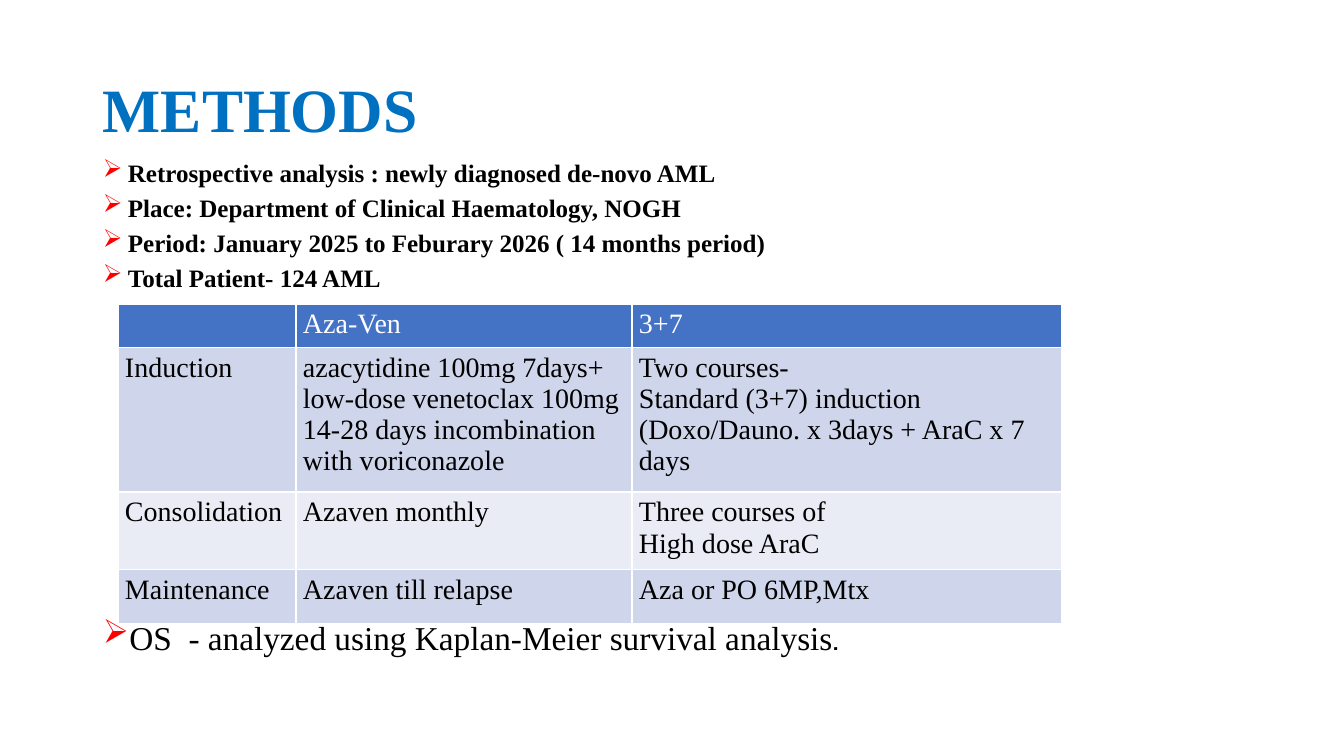
from lxml.etree import SubElement
from pptx import Presentation
from pptx.dml.color import RGBColor
from pptx.enum.text import MSO_ANCHOR
from pptx.oxml.ns import qn
from pptx.util import Pt

PX = 914400 / 100.8
FONT = "Times New Roman"
COLORS = {
    "title": "0070C0",
    "bullet": "FF0000",
    "text": "000000",
    "header": "4472C4",
    "header_text": "FFFFFF",
    "odd_row": "CFD5EA",
    "even_row": "E9EBF5",
}
FACTS = [
    "Retrospective analysis : newly diagnosed de-novo AML",
    "Place: Department of Clinical Haematology, NOGH",
    "Period: January 2025 to Feburary 2026 ( 14 months period)",
    "Total Patient- 124 AML",
]
OUTCOME = ["OS  - analyzed using Kaplan-Meier survival analysis", "."]
REGIMENS = [
    ["", "Aza-Ven", "3+7"],
    ["Induction",
     "azacytidine 100mg 7days+ low-dose venetoclax 100mg 14-28 days "
     "incombination with voriconazole",
     "Two courses-\nStandard (3+7) induction\n(Doxo/Dauno. x 3days + AraC x 7 days"],
    ["Consolidation", "Azaven monthly", "Three courses of\nHigh dose AraC"],
    ["Maintenance", "Azaven till relapse", "Aza or PO 6MP,Mtx"],
]
COLUMN_WIDTHS = [178, 336, 430]
# Least heights: rows grow to fit their text.
ROW_HEIGHTS = [36, 89, 61, 54]


def px(length):
    return round(length * PX)


def color(name):
    return RGBColor.from_string(COLORS[name])


def style(font, size, color_name, bold=False, name=FONT):
    font.name = name
    font.size = Pt(size)
    font.bold = bold
    font.color.rgb = color(color_name)


def add_text_frame(page, box):
    frame = page.shapes.add_textbox(*map(px, box)).text_frame
    frame.word_wrap = True
    return frame


def add_title(page, box):
    frame = add_text_frame(page, box)
    frame.vertical_anchor = MSO_ANCHOR.MIDDLE
    frame.text = "METHODS"
    para = frame.paragraphs[0]
    para.line_spacing = 0.9
    style(para.runs[0].font, 44, "title", bold=True)


def add_bullet(para):
    """Add an arrowhead bullet, which Wingdings keeps at the letter Ø."""
    props = para._p.get_or_add_pPr()
    props.set("marL", str(px(25)))
    props.set("indent", str(-px(25)))
    bullet_color = SubElement(props, qn("a:buClr"))
    SubElement(bullet_color, qn("a:srgbClr"), val=COLORS["bullet"])
    SubElement(props, qn("a:buFont"), typeface="Wingdings", charset="2")
    SubElement(props, qn("a:buChar"), char="Ø")


def add_facts(page, box):
    frame = add_text_frame(page, box)
    frame.text = "\n".join(FACTS)
    for index, para in enumerate(frame.paragraphs):
        add_bullet(para)
        para.line_spacing = 0.7
        para.space_before = Pt(10 if index else 0)
        style(para.runs[0].font, 17.9, "text", bold=True)


def add_outcome(page, box):
    para = add_text_frame(page, box).paragraphs[0]
    add_bullet(para)
    para.line_spacing = 0.7
    for text, font_name in zip(OUTCOME, [FONT, "Cabin"]):
        span = para.add_run()
        span.text = text
        style(span.font, 23.8, "text", name=font_name)


def fill_cell(cell, text, fill, text_color):
    cell.fill.solid()
    cell.fill.fore_color.rgb = color(fill)
    cell.margin_left = cell.margin_right = px(7)
    cell.margin_top = cell.margin_bottom = px(5)
    cell.text = text
    for para in cell.text_frame.paragraphs:
        for span in para.runs:
            style(span.font, 20, text_color)


def add_regimens(page, box):
    table = page.shapes.add_table(
        len(ROW_HEIGHTS), len(COLUMN_WIDTHS), *map(px, box)).table
    for column, width in zip(table.columns, COLUMN_WIDTHS):
        column.width = px(width)
    for index, (row, height) in enumerate(zip(table.rows, ROW_HEIGHTS)):
        row.height = px(height)
        if index == 0:
            fill, text_color = "header", "header_text"
        else:
            fill, text_color = "odd_row" if index % 2 else "even_row", "text"
        for cell, text in zip(row.cells, REGIMENS[index]):
            fill_cell(cell, text, fill, text_color)


def main():
    deck = Presentation()
    deck.slide_width, deck.slide_height = px(1344), px(756)
    page = deck.slides.add_slide(deck.slide_layouts[6])
    add_title(page, (93, 40, 1159, 146))
    add_facts(page, (93, 161, 1159, 140))
    add_regimens(page, (118, 304, sum(COLUMN_WIDTHS), 304))
    add_outcome(page, (93, 623, 1159, 40))
    deck.save("out.pptx")


if __name__ == "__main__":
    main()
